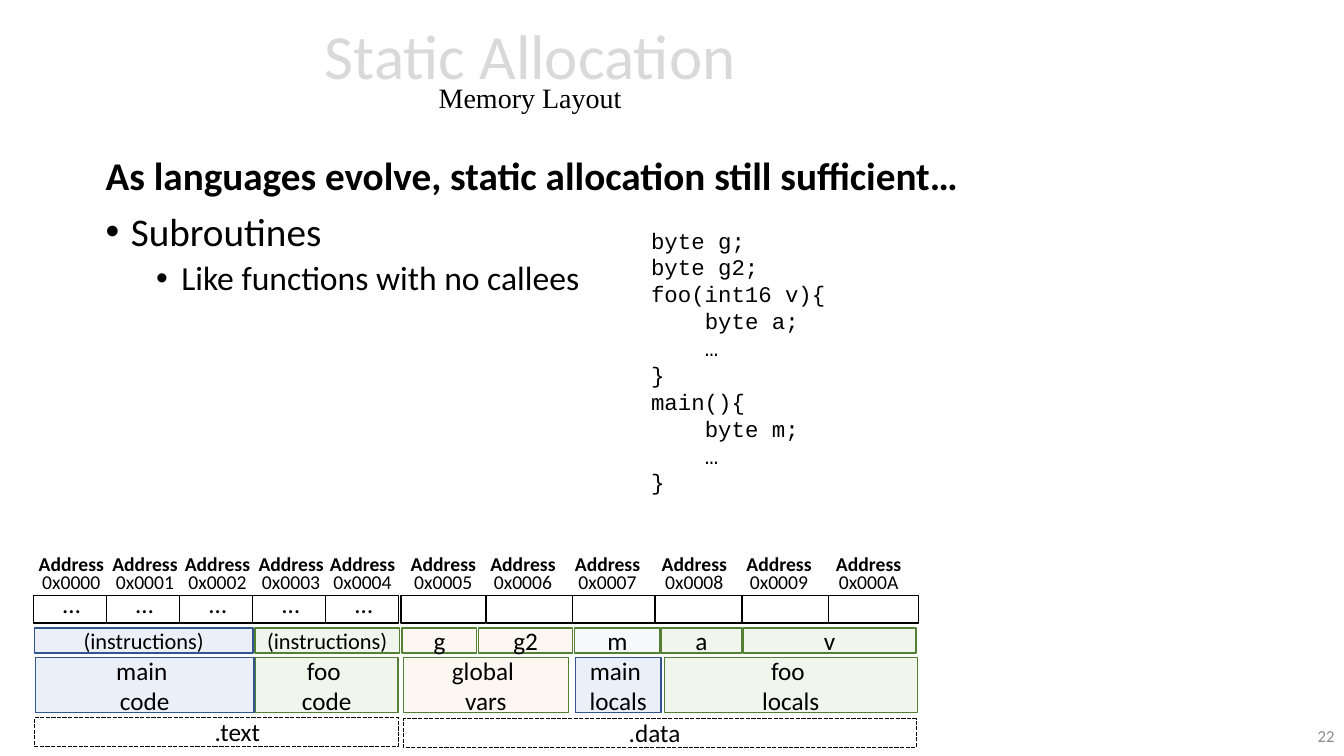
from lxml import etree
from pptx import Presentation
from pptx.dml.color import RGBColor
from pptx.enum.dml import MSO_LINE
from pptx.enum.shapes import MSO_SHAPE
from pptx.enum.text import MSO_ANCHOR, PP_ALIGN
from pptx.oxml.ns import qn
from pptx.util import Pt

LEFT, CENTER, RIGHT = PP_ALIGN.LEFT, PP_ALIGN.CENTER, PP_ALIGN.RIGHT
TOP, MIDDLE = MSO_ANCHOR.TOP, MSO_ANCHOR.MIDDLE
RECTANGLE, DASH = MSO_SHAPE.RECTANGLE, MSO_LINE.SQUARE_DOT

THEME = {
    "body": "Calibri", "code": "Courier New", "subtitle": "Times New Roman",
    "black": "000000", "white": "FFFFFF", "title": "D9D9D9", "number": "8C8C8C",
    "title_size": 45, "subtitle_size": 20, "lead_size": 28, "detail_size": 24,
    "text_size": 18, "code_size": 16, "address_size": 14, "number_size": 12,
    "main": ("4472C4", "325491"), "foo": ("70AD47", "538035"),
    "global": ("F4B183", "538035"), "local": ("B4C7E7", "538035"),
}

TITLE, SUBTITLE, PAGE_NUMBER = "Static Allocation", "Memory Layout", "22"
POINTS = [
    ("As languages evolve, static allocation still sufficient…", 0, None, "lead_size", 10),
    ("Subroutines", 0, 18, "lead_size", 10),
    ("Like functions with no callees", 1, 54, "detail_size", 5),
]
CODE = [
    ("byte g;", 0), ("byte g2;", 0), ("foo(int16 v){", 0), ("byte a;", 1), ("…", 1),
    ("}", 0), ("main(){", 0), ("byte m;", 1), ("…", 1), ("}", 0),
]
TEXT_ADDRESSES = [
    ("0x0000", 23), ("0x0001", 75.6), ("0x0002", 127.4), ("0x0003", 180), ("0x0004", 231),
]
DATA_ADDRESSES = [
    ("0x0005", 288.7, 286.5, 60.5), ("0x0007", 406, 406, 67), ("0x0008", 468, 468, 67),
    ("0x0009", 528.5, 530, 67), ("0x000A", 592.5, 592, 64), ("0x0006", 345.6, 347.7, 61.3),
]
VARIABLES = [
    ("(instructions)", 24.5, 156.3, "main", "code_size"),
    ("(instructions)", 182.2, 103, "foo", "code_size"),
    ("g", 287.3, 53.3, "global", "text_size"),
    ("g2", 342, 67, "global", "text_size"),
    ("m", 410.4, 61.2, "local", "text_size"),
    ("a", 472.3, 57.6, "foo", "text_size"),
    ("v", 530.6, 123.8, "foo", "text_size"),
]
OWNERS = [
    ("foo \ncode", 182.2, 102.2, "foo", "text_size"),
    ("main \ncode", 25.2, 156.3, "main", "text_size"),
    ("global \nvars", 288, 118, "global", "text_size"),
    ("main \nlocals", 411, 61.2, "main", "text_size"),
    ("foo \nlocals", 474.5, 180.7, "foo", "text_size"),
]
SEGMENTS = [
    (".text", 24.5, 512.6, 260, 146.2, 48.2),
    (".data", 288, 513.4, 366.5, 442, 51.8),
]
CELL_TOP, CELL_HEIGHT, CELL_STEP, FIRST_CELL = 425.5, 19.5, 52.2, 23.8
LABEL_TOP, LABEL_WIDTH, VALUE_TOP, VALUE_WIDTH = 391, 56, 403.4, 45.4
VARIABLE_TOP, VARIABLE_HEIGHT, OWNER_TOP, OWNER_HEIGHT = 448.5, 18, 469.5, 39.6
CODE_INDENT = 38.4

deck = Presentation()
deck.slide_width, deck.slide_height = Pt(960), Pt(540)
page = deck.slides.add_slide(deck.slide_layouts[6])


def style(font, size, color="black", face="body", bold=False):
    font.name, font.size, font.bold = THEME[face], Pt(THEME[size]), bold
    font.color.rgb = RGBColor.from_string(THEME[color])


def add_text(left, top, width, height, anchor=TOP, wrap=True, inset=7.2):
    frame = page.shapes.add_textbox(Pt(left), Pt(top), Pt(width), Pt(height)).text_frame
    frame.word_wrap, frame.vertical_anchor = wrap, anchor
    frame.margin_left = frame.margin_right = Pt(inset)
    return frame


def add_line(left, top, width, height, text, size, align=LEFT, color="black", bold=False, **layout):
    para = add_text(left, top, width, height, **layout).paragraphs[0]
    para.text, para.alignment = text, align
    style(para.font, size, color, bold=bold)


def indent(para, margin, hanging=0, bullet=None):
    properties = para._p.get_or_add_pPr()
    properties.set("marL", str(Pt(margin)))
    properties.set("indent", str(Pt(-hanging)))
    if bullet:
        etree.SubElement(properties, qn("a:buFont")).set("typeface", "Arial")
        etree.SubElement(properties, qn("a:buChar")).set("char", bullet)


def add_box(left, top, width, height, line, fill=None, opacity=100):
    box = page.shapes.add_shape(RECTANGLE, Pt(left), Pt(top), Pt(width), Pt(height))
    box.shadow.inherit = False
    box.line.color.rgb, box.line.width = RGBColor.from_string(line), Pt(1)
    if fill is None:
        box.fill.background()
        return box
    box.fill.solid()
    box.fill.fore_color.rgb = RGBColor.from_string(fill)
    if opacity < 100:
        color = box._element.spPr.find(qn("a:solidFill"))[0]
        etree.SubElement(color, qn("a:alpha")).set("val", str(opacity * 1000))
    return box


def add_blocks(blocks, top, height):
    for text, left, width, owner, size in blocks:
        fill, line = THEME[owner]
        frame = add_box(left, top, width, height, line, fill, 10).text_frame
        frame.vertical_anchor, frame.text = MIDDLE, text
        for para in frame.paragraphs:
            para.alignment = CENTER
            style(para.font, size)


def add_address(address, left):
    add_line(left, LABEL_TOP, LABEL_WIDTH, 24.5, "Address", "address_size", CENTER, bold=True, inset=0)
    value_left = left + (LABEL_WIDTH - VALUE_WIDTH) / 2
    add_line(value_left, VALUE_TOP, VALUE_WIDTH, 25, address, "address_size", CENTER, inset=0)


def add_cell(left, width):
    add_box(left, CELL_TOP, width, CELL_HEIGHT, THEME["black"], THEME["white"])


heading = add_text(18.7, 1.4, 720, 104.4, MIDDLE).paragraphs[0]
heading.alignment, heading.line_spacing = CENTER, 0.7
span = heading.add_run()
span.text = TITLE
style(span.font, "title_size", "title")
heading.add_line_break()
span = heading.add_run()
span.text = SUBTITLE
style(span.font, "subtitle_size", face="subtitle")

add_line(744.5, 511.2, 216, 28.8, PAGE_NUMBER, "number_size", RIGHT, "number", anchor=MIDDLE)

body = add_text(68.4, 108, 670.3, 342.7)
body.text = "\n".join(point[0] for point in POINTS)
for para, (text, level, margin, size, before) in zip(body.paragraphs, POINTS):
    para.level = level
    if margin:
        indent(para, margin, 18, "•")
    para.line_spacing, para.space_before = 0.9, Pt(before)
    style(para.font, size, bold=margin is None)

listing = add_text(465.1, 158.4, 227.5, 200.9, inset=0)
listing.text = "\n".join(text for text, depth in CODE)
for para, (text, depth) in zip(listing.paragraphs, CODE):
    indent(para, depth * CODE_INDENT)
    style(para.font, "code_size", face="code")

for address, label_left, cell_left, width in DATA_ADDRESSES:
    add_cell(cell_left, width)
    add_address(address, label_left)

for index, (address, label_left) in enumerate(TEXT_ADDRESSES):
    cell_left = FIRST_CELL + index * CELL_STEP
    add_cell(cell_left, CELL_STEP)
    add_address(address, label_left)
    add_line(cell_left + 14, 416.9, 27.4, 28.8, "…", "text_size", wrap=False)

for name, left, top, width, name_left, name_width in SEGMENTS:
    add_box(left, top, width, 20.5, THEME["black"]).line.dash_style = DASH
    add_line(name_left, top - 4.3, name_width, 28.8, name, "text_size", wrap=False)

add_blocks(OWNERS, OWNER_TOP, OWNER_HEIGHT)
add_blocks(VARIABLES, VARIABLE_TOP, VARIABLE_HEIGHT)

deck.save("out.pptx")
